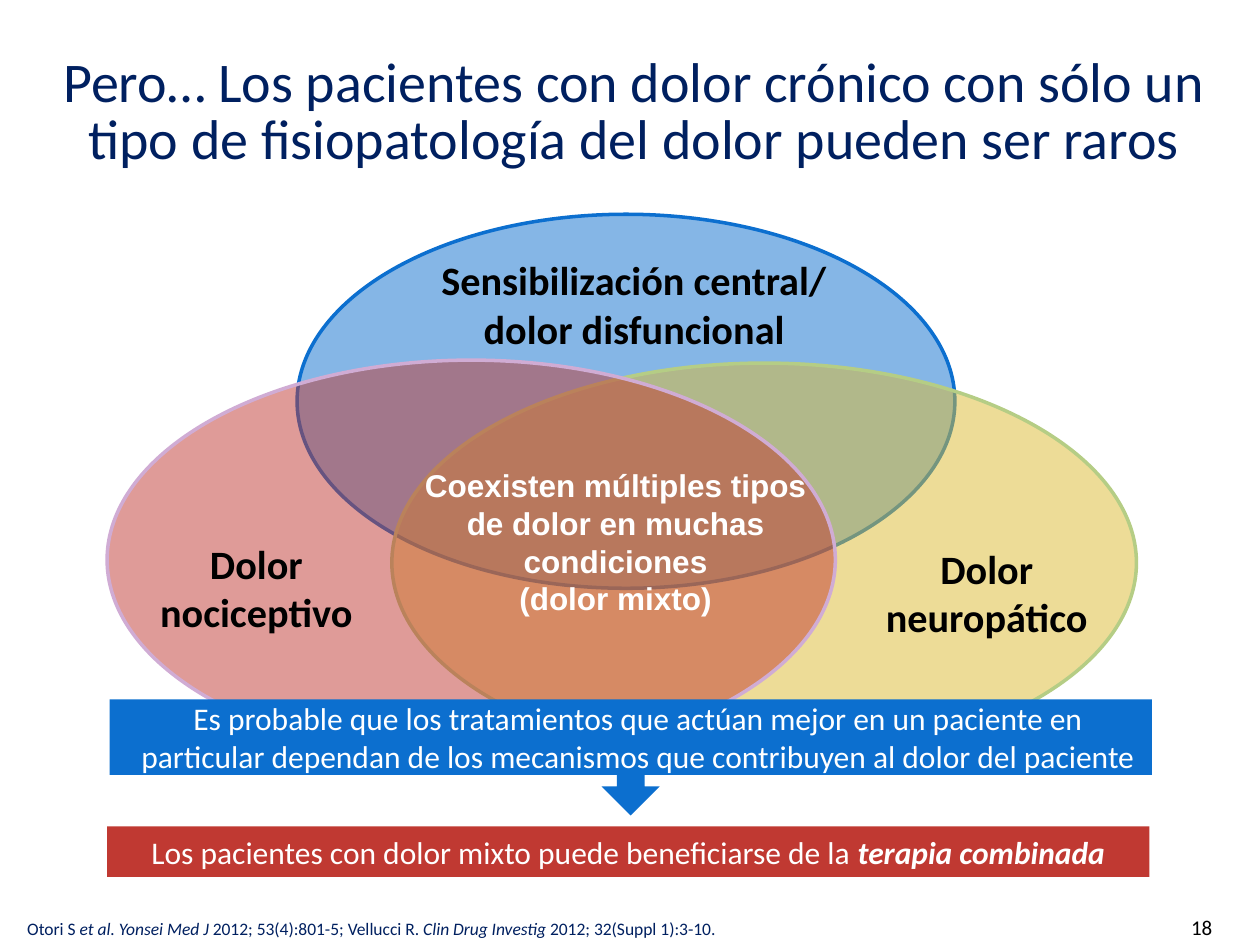
"""Build a slide on overlapping pain mechanisms and combined therapy."""
import pptx
import pptx.dml.color
import pptx.enum.shapes
import pptx.enum.text
import pptx.oxml
import pptx.oxml.ns
import pptx.util

Cm = pptx.util.Cm
Pt = pptx.util.Pt
RGBColor = pptx.dml.color.RGBColor
Shape = pptx.enum.shapes.MSO_SHAPE
Align = pptx.enum.text.PP_ALIGN
Anchor = pptx.enum.text.MSO_ANCHOR

BLUE = RGBColor(0x0C, 0x6F, 0xCF)
YELLOW = RGBColor(0xDD, 0xBB, 0x30)
RED = RGBColor(0xC0, 0x39, 0x32)
GREEN = RGBColor(0xB5, 0xCD, 0x85)
LILAC = RGBColor(0xD0, 0xAC, 0xD4)
NAVY = RGBColor(0x00, 0x20, 0x60)
BLACK = RGBColor(0x00, 0x00, 0x00)
WHITE = RGBColor(0xFF, 0xFF, 0xFF)


class PainSlide:
    """Hold the style and the current slide."""

    def __init__(self, slide, font="Calibri"):
        self.slide = slide
        self.font = font

    def set_text(self, shape, paragraphs, size, color, bold=None, align=Align.CENTER,
                 anchor=Anchor.TOP, font=None):
        """Fill a shape with paragraphs, each a string or a list of (text, bold, italic)."""
        frame = shape.text_frame
        frame.word_wrap = True
        frame.vertical_anchor = anchor
        for index, content in enumerate(paragraphs):
            paragraph = frame.add_paragraph() if index else frame.paragraphs[0]
            paragraph.alignment = align
            paragraph.font.name = font or self.font
            paragraph.font.size = Pt(size)
            paragraph.font.color.rgb = color
            paragraph.font.bold = bold
            if isinstance(content, str):
                paragraph.text = content
                continue
            for text, run_bold, run_italic in content:
                run = paragraph.add_run()
                run.text = text
                run.font.bold = run_bold
                run.font.italic = run_italic
        return frame

    def text(self, left, top, width, height, paragraphs, size, color, **style):
        """Add a text box."""
        box = self.slide.shapes.add_textbox(Cm(left), Cm(top), Cm(width), Cm(height))
        return self.set_text(box, paragraphs, size, color, **style)

    def block(self, kind, left, top, width, height, fill):
        """Add a plain filled shape without an outline."""
        shape = self.slide.shapes.add_shape(kind, Cm(left), Cm(top), Cm(width), Cm(height))
        shape.shadow.inherit = False
        shape.fill.solid()
        shape.fill.fore_color.rgb = fill
        shape.line.fill.background()
        return shape

    def ellipse(self, left, top, width, height, fill, outline):
        """Add a half-transparent ellipse of the diagram."""
        shape = self.block(Shape.OVAL, left, top, width, height, fill)
        shape.line.color.rgb = outline
        shape.line.width = Pt(2)
        solid_fill = shape.element.spPr.find(pptx.oxml.ns.qn("a:solidFill"))
        solid_fill[0].append(pptx.oxml.parse_xml(
            f'<a:alpha {pptx.oxml.ns.nsdecls("a")} val="50000"/>'))

    def callout(self, left, top, width, height, fill, text):
        """Add a box that points down to the conclusion."""
        shape = self.block(Shape.DOWN_ARROW_CALLOUT, left, top, width, height, fill)
        for index, value in enumerate((0.24, 0.25, 0.25, 0.65)):
            shape.adjustments[index] = value
        frame = self.set_text(shape, [text], 18, WHITE, anchor=Anchor.MIDDLE)
        frame.paragraphs[0]._p.get_or_add_pPr().set("marL", str(Cm(0.3)))

    def banner(self, left, top, width, height, fill, runs):
        """Add the conclusion bar."""
        shape = self.block(Shape.RECTANGLE, left, top, width, height, fill)
        self.set_text(shape, [runs], 18, WHITE, anchor=Anchor.MIDDLE)


def main():
    """Create the presentation and save it."""
    presentation = pptx.Presentation()
    presentation.slide_width = Cm(25.4)
    presentation.slide_height = Cm(19.05)
    page = PainSlide(presentation.slides.add_slide(presentation.slide_layouts[6]))

    page.ellipse(5.99, 4.32, 13.26, 7.54, BLUE, BLUE)
    page.ellipse(7.9, 7.32, 15.01, 8.05, YELLOW, GREEN)
    page.ellipse(2.16, 7.26, 14.68, 8.05, RED, LILAC)

    title = page.text(
        0.89, 0.71, 23.8, 3.18,
        ["Pero… Los pacientes con dolor crónico con sólo un tipo de fisiopatología "
         "del dolor pueden ser raros"], 32, NAVY, anchor=Anchor.MIDDLE)
    title.paragraphs[0].line_spacing = 0.85
    page.text(18.77, 18.19, 5.92, 1.02, ["18"], 12, BLACK,
              align=Align.RIGHT, anchor=Anchor.MIDDLE)

    page.callout(2.21, 14.1, 21.01, 2.34, BLUE,
                 "Es probable que los tratamientos que actúan mejor en un paciente en "
                 "particular dependan de los mecanismos que contribuyen al dolor del paciente")
    page.banner(2.16, 16.66, 21.01, 1.02, RED, [
        ("Los pacientes con dolor mixto puede beneficiarse de la ", None, None),
        ("terapia combinada", True, True)])
    page.text(0.3, 18.39, 24.71, 0.69, [[
        ("Otori S ", None, None),
        ("et al. Yonsei Med J", None, True),
        (" 2012; 53(4):801-5; Vellucci R.", None, None),
        (" Clin Drug Investig", None, True),
        (" 2012; 32(Suppl 1):3-10.", None, None)]], 10, NAVY, align=Align.LEFT)

    page.text(8.31, 9.27, 8.2, 3.33,
              ["Coexisten múltiples tipos de dolor en muchas condiciones", "(dolor mixto)"],
              18, WHITE, bold=True, font="Arial")
    for left, top, width, lines in (
            (1.27, 10.74, 7.8, ["Dolor", "nociceptivo"]),
            (16.1, 10.85, 7.59, ["Dolor", "neuropático"]),
            (6.12, 5.03, 13.34, ["Sensibilización central/\vdolor disfuncional"])):
        page.text(left, top, width, 2.25, lines, 23, BLACK, bold=True)

    presentation.save("out.pptx")


if __name__ == "__main__":
    main()
